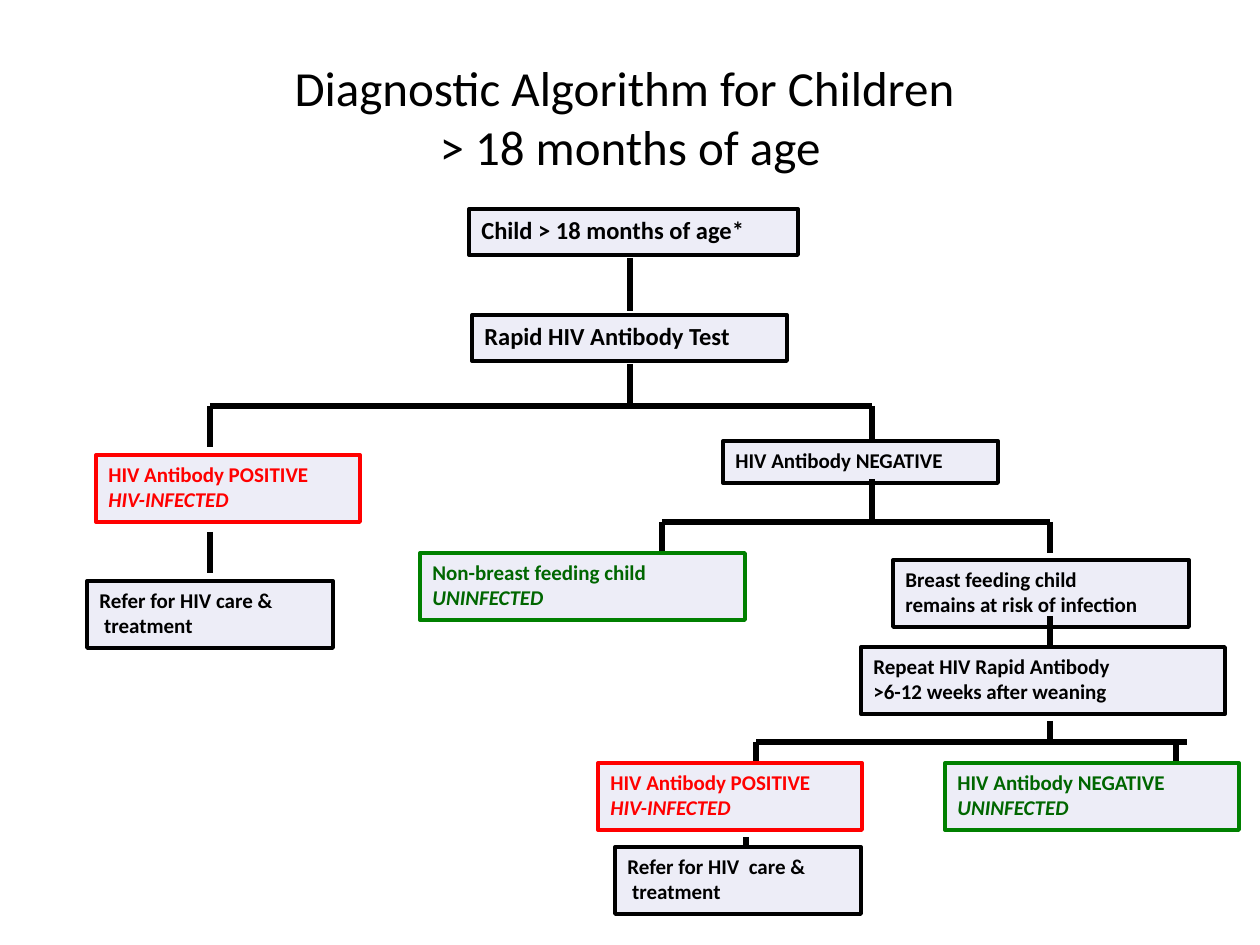
from lxml import etree
from pptx import Presentation
from pptx.dml.color import RGBColor
from pptx.enum.shapes import MSO_CONNECTOR, MSO_SHAPE
from pptx.enum.text import MSO_ANCHOR, PP_ALIGN
from pptx.oxml.ns import qn
from pptx.util import Emu, Pt

STRAIGHT = MSO_CONNECTOR.STRAIGHT
RECTANGLE = MSO_SHAPE.RECTANGLE
TOP, MIDDLE = MSO_ANCHOR.TOP, MSO_ANCHOR.MIDDLE
LEFT, CENTER = PP_ALIGN.LEFT, PP_ALIGN.CENTER

EMU_PER_PX = 914400 / 126
BLACK, RED, GREEN, DARK_GREEN = "000000", "FF0000", "008000", "006600"
PALE = "EDEDF7"
ONE_LINE, TWO_LINES = 42, 67


def px(length):
    return Emu(round(length * EMU_PER_PX))


def color(hex_code):
    return RGBColor.from_string(hex_code)


class Flowchart:
    font = "Calibri"
    box_border = Pt(2.25)
    branch_width = Pt(3)

    def __init__(self, slide):
        self.slide = slide

    def set_text(self, frame, text, size, text_color, align, anchor, bold=False):
        frame.word_wrap = True
        frame.vertical_anchor = anchor
        frame.text = text
        for paragraph in frame.paragraphs:
            paragraph.alignment = align
            for run in paragraph.runs:
                run.font.name = self.font
                run.font.size = Pt(size)
                run.font.bold = bold
                run.font.color.rgb = color(text_color)

    def title(self, text, x, y, width, height):
        heading = self.slide.shapes.add_textbox(px(x), px(y), px(width), px(height))
        self.set_text(heading.text_frame, text, 28, BLACK, CENTER, MIDDLE)

    def box(self, text, x, y, width, height, size=12, border=BLACK, text_color=BLACK):
        step = self.slide.shapes.add_shape(RECTANGLE, px(x), px(y), px(width), px(height))
        step.shadow.inherit = False
        step.fill.solid()
        step.fill.fore_color.rgb = color(PALE)
        step.line.color.rgb = color(border)
        step.line.width = self.box_border
        self.set_text(step.text_frame, text, size, text_color, LEFT, TOP, bold=True)
        return step

    def result(self, text, x, y, width, border, text_color):
        """Outcome box whose second line, the diagnosis, is italic."""
        outcome = self.box(text, x, y, width, TWO_LINES, border=border, text_color=text_color)
        for run in outcome.text_frame.paragraphs[1].runs:
            run.font.italic = True

    def branch(self, x1, y1, x2, y2):
        link = self.slide.shapes.add_connector(STRAIGHT, px(x1), px(y1), px(x2), px(y2))
        link.line.color.rgb = color(BLACK)
        link.line.width = self.branch_width
        etree.SubElement(link._element.spPr, qn("a:effectLst"))

    def drop(self, x, top, bottom):
        self.branch(x, top, x, bottom)


def main():
    deck = Presentation()
    deck.slide_width, deck.slide_height = px(1260), px(945)
    chart = Flowchart(deck.slides.add_slide(deck.slide_layouts[6]))

    chart.title("Diagnostic Algorithm for Children \v> 18 months of age", 63, 38, 1134, 157)

    # Branches behind the boxes: horizontal bars, then vertical drops
    for left, right, y in [(210, 872, 406), (662, 1050, 522), (756, 1187, 742)]:
        chart.branch(left, y, right, y)
    for x, top, bottom in [
        (630, 258, 311), (630, 364, 406),
        (210, 406, 447), (872, 406, 447), (210, 532, 573),
        (662, 522, 553), (1050, 522, 553),
        (1050, 721, 742), (756, 742, 762), (1176, 742, 762), (746, 837, 847),
    ]:
        chart.drop(x, top, bottom)

    # First test
    chart.box("Child > 18 months of age*", 469, 209, 329, 46, size=14)
    chart.box("Rapid HIV Antibody Test", 472, 315, 315, 46, size=14)

    # Steps
    for text, x, y, width, height in [
        ("HIV Antibody NEGATIVE", 723, 441, 275, ONE_LINE),
        ("Refer for HIV care &\n treatment", 87, 581, 246, TWO_LINES),
        ("Breast feeding child\nremains at risk of infection", 893, 560, 296, TWO_LINES),
        ("Repeat HIV Rapid Antibody\n>6-12 weeks after weaning", 861, 647, 364, TWO_LINES),
        ("Refer for HIV  care &\n treatment", 615, 847, 246, TWO_LINES),
    ]:
        chart.box(text, x, y, width, height)

    # Infected outcomes
    for x, y in [(96, 455), (598, 763)]:
        chart.result("HIV Antibody POSITIVE\nHIV-INFECTED", x, y, 264, RED, RED)

    # Uninfected outcomes
    for finding, x, y, width in [
        ("Non-breast feeding child", 420, 553, 325),
        ("HIV Antibody NEGATIVE", 945, 763, 294),
    ]:
        chart.result(f"{finding}\nUNINFECTED", x, y, width, GREEN, DARK_GREEN)

    # Drops that start over the lower edge of a box
    chart.drop(872, 479, 522)
    chart.drop(1050, 616, 647)

    deck.save("out.pptx")


if __name__ == "__main__":
    main()
